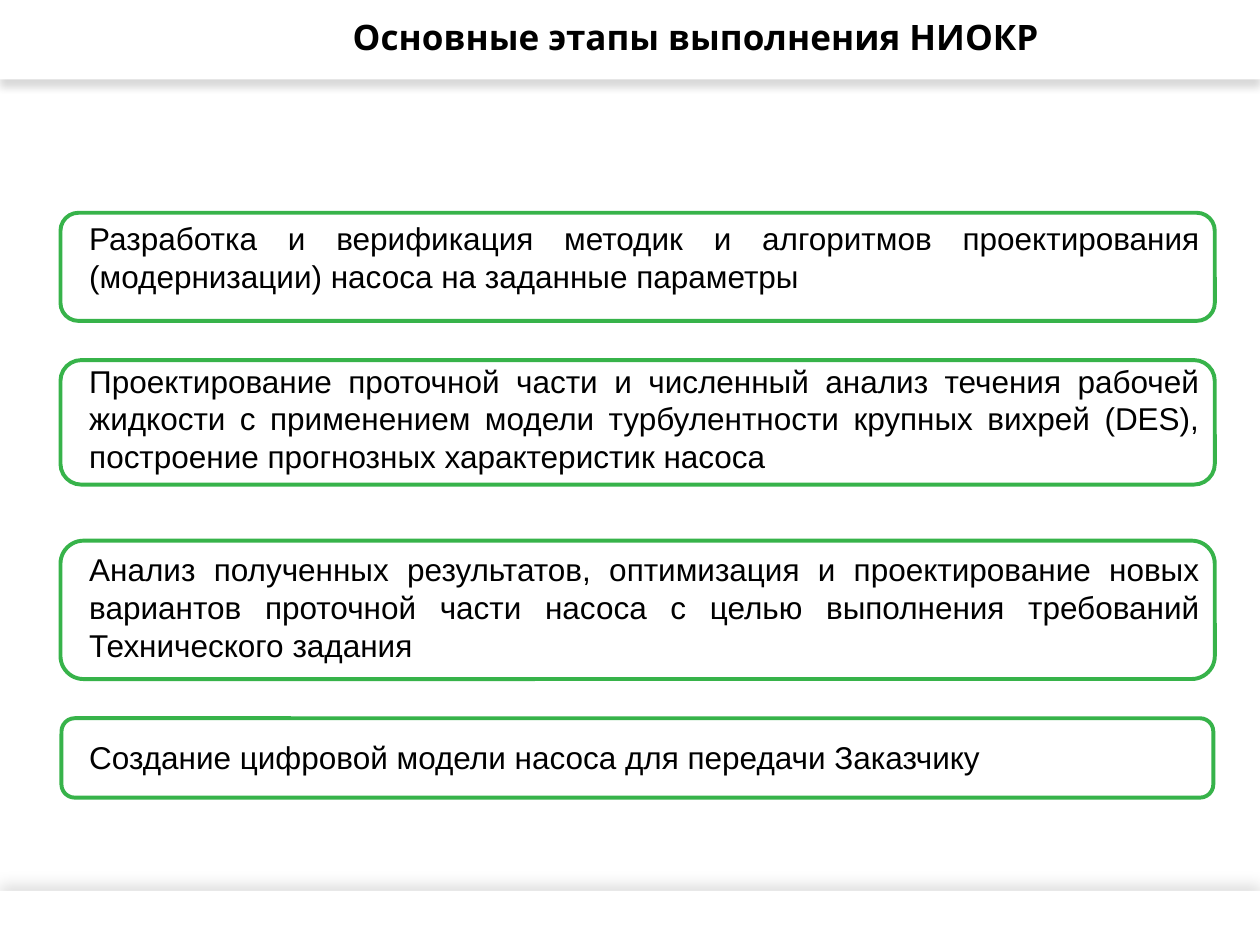
from dataclasses import dataclass

from lxml.etree import SubElement
from pptx import Presentation
from pptx.dml.color import RGBColor
from pptx.enum.shapes import MSO_SHAPE
from pptx.enum.text import MSO_ANCHOR, PP_ALIGN
from pptx.oxml.ns import qn
from pptx.util import Cm, Pt


@dataclass(frozen=True)
class Theme:
    background: RGBColor = RGBColor(0xFF, 0xFF, 0xFF)
    text: RGBColor = RGBColor(0, 0, 0)
    frame: RGBColor = RGBColor(0x37, 0xB3, 0x4A)
    shadow: str = "000000"
    title_font: str = "Karla"
    body_font: str = "Arial"
    title_size: Pt = Pt(20)
    body_size: Pt = Pt(18)
    frame_width: Pt = Pt(2.25)


THEME = Theme()

STAGES = [
    ("Разработка и верификация методик и алгоритмов проектирования "
     "(модернизации) насоса на заданные параметры", 0),
    ("Проектирование проточной части и численный анализ течения рабочей "
     "жидкости с применением модели турбулентности крупных вихрей (DES), "
     "построение прогнозных характеристик насоса", 38.3),
    ("Анализ полученных результатов, оптимизация и проектирование новых "
     "вариантов проточной части насоса с целью выполнения требований "
     "Технического задания", 42.9),
    ("Создание цифровой модели насоса для передачи Заказчику", 42.9),
]

FRAMES = [
    (1.22, 4.29, 23.27, 2.18),
    (1.22, 7.26, 23.27, 2.51),
    (1.22, 10.9, 23.27, 2.79),
    (1.24, 14.48, 23.22, 1.6),
]


def add_shadow(shape, opacity, blur, distance, direction):
    shape.shadow.inherit = False
    effects = shape._element.spPr.find(qn("a:effectLst"))
    shadow = SubElement(
        effects, qn("a:outerShdw"), blurRad=str(Pt(blur)), dist=str(Pt(distance)),
        dir=str(direction * 60000), algn="ctr", rotWithShape="0")
    color = SubElement(shadow, qn("a:srgbClr"), val=THEME.shadow)
    SubElement(color, qn("a:alpha"), val=str(opacity * 1000))


def add_band(slide, top, height, **shadow):
    band = slide.shapes.add_shape(
        MSO_SHAPE.RECTANGLE, Cm(0), Cm(top), Cm(25.4), Cm(height))
    band.fill.solid()
    band.fill.fore_color.rgb = THEME.background
    band.line.fill.background()
    add_shadow(band, **shadow)


def add_text_box(slide, left, top, width, height):
    box = slide.shapes.add_textbox(Cm(left), Cm(top), Cm(width), Cm(height))
    box.text_frame.word_wrap = True
    return box.text_frame


def add_run(paragraph, text, font_name, size, bold=False):
    run = paragraph.add_run()
    run.text = text
    run.font.name = font_name
    run.font.size = size
    run.font.bold = bold
    run.font.color.rgb = THEME.text


def add_title(slide, text):
    text_frame = add_text_box(slide, 4.65, 0, 18.75, 1.6)
    text_frame.vertical_anchor = MSO_ANCHOR.MIDDLE
    paragraph = text_frame.paragraphs[0]
    paragraph.alignment = PP_ALIGN.CENTER
    paragraph.line_spacing = 0.9
    add_run(paragraph, text, THEME.title_font, THEME.title_size, bold=True)


def add_stages(slide, stages):
    text_frame = add_text_box(slide, 1.55, 4.29, 22.89, 11.63)
    for index, (text, gap) in enumerate(stages):
        paragraph = text_frame.add_paragraph() if index else text_frame.paragraphs[0]
        paragraph.alignment = PP_ALIGN.JUSTIFY
        if gap:
            paragraph.space_before = Pt(gap)
        add_run(paragraph, text, THEME.body_font, THEME.body_size)


def add_frame(slide, left, top, width, height):
    frame = slide.shapes.add_shape(
        MSO_SHAPE.ROUNDED_RECTANGLE, Cm(left), Cm(top), Cm(width), Cm(height))
    frame.shadow.inherit = False
    frame.fill.background()
    frame.line.color.rgb = THEME.frame
    frame.line.width = THEME.frame_width


def main():
    presentation = Presentation()
    presentation.slide_width = Cm(25.4)
    presentation.slide_height = Cm(19.05)
    slide = presentation.slides.add_slide(presentation.slide_layouts[6])
    add_band(slide, 0, 1.6, opacity=14, blur=4, distance=4, direction=90)
    add_band(slide, 17.96, 1.09, opacity=13, blur=9, distance=4, direction=270)
    add_title(slide, "Основные этапы выполнения НИОКР")
    add_stages(slide, STAGES)
    for frame in FRAMES:
        add_frame(slide, *frame)
    presentation.save("out.pptx")


if __name__ == "__main__":
    main()
